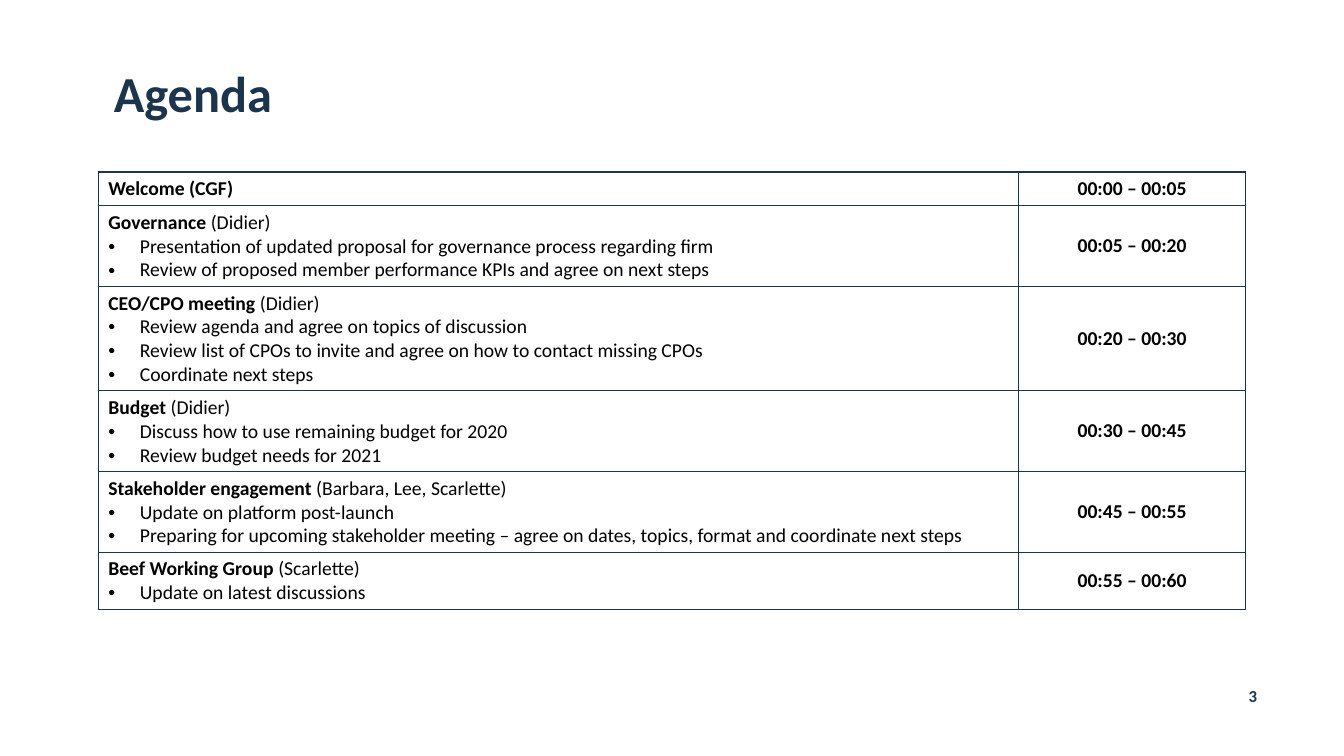
from lxml.etree import SubElement
from pptx import Presentation
from pptx.dml.color import RGBColor
from pptx.enum.text import MSO_ANCHOR, PP_ALIGN
from pptx.oxml.ns import qn
from pptx.util import Pt

NAVY = RGBColor(0x1D, 0x34, 0x4D)
BORDER = RGBColor(0x1D, 0x35, 0x4E)
BLACK = RGBColor(0, 0, 0)
FONT = "Calibri"
INDENT = Pt(22.5)
LINE_HEIGHT = 16.9
CELL_PADDING = 7

# Topic, speakers, points, time
AGENDA = [
    ("Welcome (CGF)", "", [], "00:00 – 00:05"),
    ("Governance ", "(Didier)", [
        "Presentation of updated proposal for governance process regarding firm",
        "Review of proposed member performance KPIs and agree on next steps",
    ], "00:05 – 00:20"),
    ("CEO/CPO meeting ", "(Didier)", [
        "Review agenda and agree on topics of discussion",
        "Review list of CPOs to invite and agree on how to contact missing CPOs",
        "Coordinate next steps",
    ], "00:20 – 00:30"),
    ("Budget ", "(Didier)", [
        "Discuss how to use remaining budget for 2020",
        "Review budget needs for 2021",
    ], "00:30 – 00:45"),
    ("Stakeholder engagement ", "(Barbara, Lee, Scarlette)", [
        "Update on platform post-launch",
        "Preparing for upcoming stakeholder meeting – agree on dates, topics, "
        "format and coordinate next steps",
    ], "00:45 – 00:55"),
    ("Beef Working Group ", "(Scarlette)", [
        "Update on latest discussions",
    ], "00:55 – 00:60"),
]


def add_run(paragraph, text, size, color, bold=True):
    run = paragraph.add_run()
    run.text = text
    run.font.name = FONT
    run.font.size = Pt(size)
    run.font.bold = bold
    run.font.color.rgb = color


def add_label(slide, box, text, size, align):
    frame = slide.shapes.add_textbox(*map(Pt, box)).text_frame
    frame.word_wrap = True
    paragraph = frame.paragraphs[0]
    paragraph.alignment = align
    add_run(paragraph, text, size, NAVY)


def add_bullet(paragraph):
    properties = paragraph._p.get_or_add_pPr()
    properties.set("marL", str(INDENT))
    properties.set("indent", str(-INDENT))
    bullet_color = SubElement(properties, qn("a:buClr"))
    SubElement(bullet_color, qn("a:srgbClr"), val=str(BLACK))
    SubElement(properties, qn("a:buFont"), typeface="Arial")
    SubElement(properties, qn("a:buChar"), char="•")


def style_cell(cell):
    cell.vertical_anchor = MSO_ANCHOR.MIDDLE
    properties = cell._tc.get_or_add_tcPr()
    for side in ("a:lnL", "a:lnR", "a:lnT", "a:lnB"):
        line = SubElement(properties, qn(side), w=str(Pt(1)))
        fill = SubElement(line, qn("a:solidFill"))
        SubElement(fill, qn("a:srgbClr"), val=str(BORDER))
    cell.fill.background()


def fill_topic(cell, topic, speakers, points):
    heading = cell.text_frame.paragraphs[0]
    add_run(heading, topic, 14, BLACK)
    if speakers:
        add_run(heading, speakers, 14, BLACK, bold=False)
    for point in points:
        paragraph = cell.text_frame.add_paragraph()
        add_bullet(paragraph)
        add_run(paragraph, point, 14, BLACK, bold=False)


def add_agenda_table(slide, left, top, width, time_width):
    heights = [CELL_PADDING + LINE_HEIGHT * (1 + len(points))
               for _, _, points, _ in AGENDA]
    table = slide.shapes.add_table(
        len(AGENDA), 2, Pt(left), Pt(top), Pt(width), Pt(sum(heights))).table
    table.first_row = table.horz_banding = False
    table.columns[0].width = Pt(width - time_width)
    table.columns[1].width = Pt(time_width)

    for row, height, (topic, speakers, points, time) in zip(
            table.rows, heights, AGENDA):
        row.height = Pt(height)
        topic_cell, time_cell = row.cells
        style_cell(topic_cell)
        style_cell(time_cell)
        fill_topic(topic_cell, topic, speakers, points)
        slot = time_cell.text_frame.paragraphs[0]
        slot.alignment = PP_ALIGN.CENTER
        add_run(slot, time, 14, BLACK)


def add_agenda_slide(presentation):
    slide = presentation.slides.add_slide(presentation.slide_layouts[6])
    # Page number and title
    add_label(slide, (859, 486.3, 72, 21.8), "3", 12, PP_ALIGN.CENTER)
    add_label(slide, (74.2, 40.5, 739.4, 51), "Agenda", 36, PP_ALIGN.LEFT)
    # Schedule
    add_agenda_table(slide, 70.2, 122.8, 819.5, 162)


def main():
    presentation = Presentation()
    presentation.slide_width = Pt(960)
    presentation.slide_height = Pt(540)
    add_agenda_slide(presentation)
    presentation.save("out.pptx")


if __name__ == "__main__":
    main()
